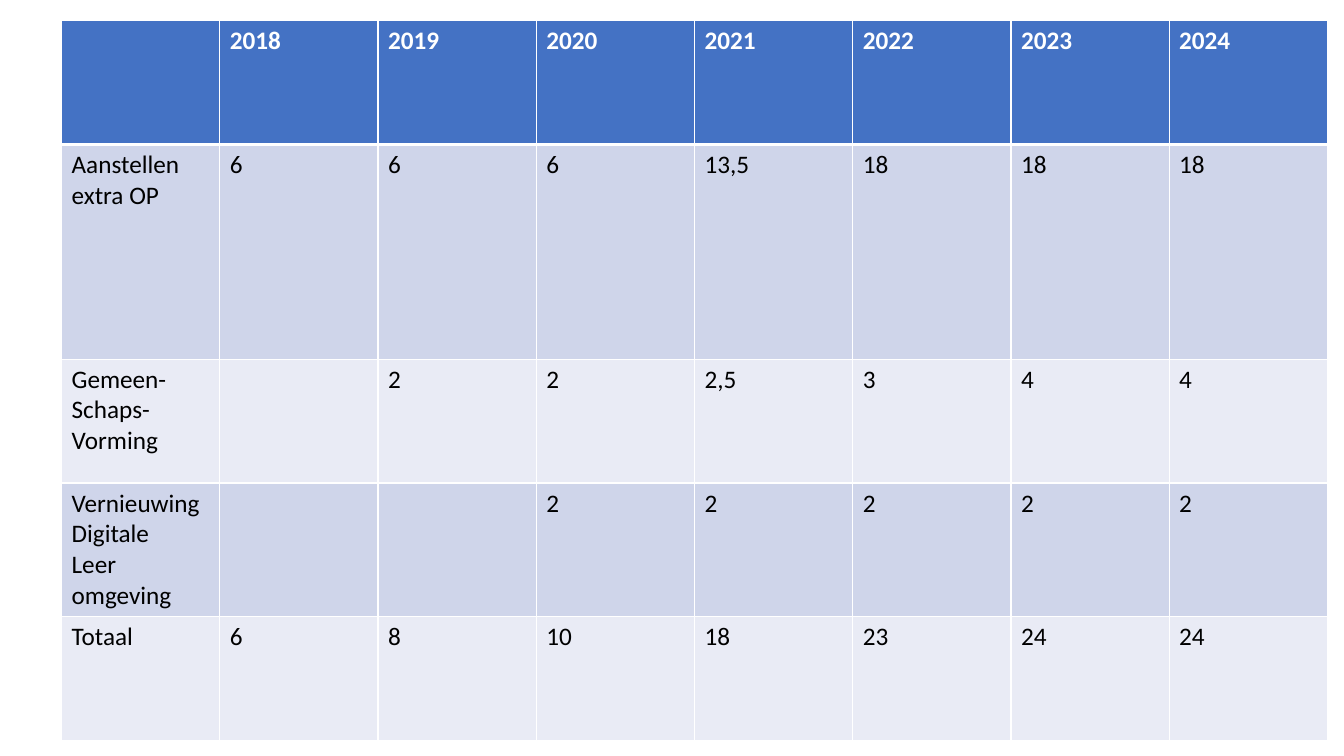
import dataclasses

import pptx
import pptx.dml.color
import pptx.oxml.ns
import pptx.util
from lxml import etree

Pt = pptx.util.Pt


@dataclasses.dataclass(frozen=True)
class Theme:
    font: str = "Calibri"
    size: int = 18
    header: str = "4472C4"
    bands: tuple = ("CFD5EA", "E9EBF5")
    header_text: str = "FFFFFF"
    body_text: str = "000000"
    border: str = "FFFFFF"


THEME = Theme()
COLUMN_WIDTH = 113.04
ROW_HEIGHTS = (88.56, 153.36, 88.56, 88.56, 88.56)

# Each line of a cell is a paragraph
BUDGET = (
    ("", "2018", "2019", "2020", "2021", "2022", "2023", "2024"),
    ("Aanstellen extra OP", "6", "6", "6", "13,5", "18", "18", "18"),
    ("Gemeen-\nSchaps-\nVorming", "", "2", "2", "2,5", "3", "4", "4"),
    ("Vernieuwing\nDigitale\nLeer\nomgeving", "", "", "2", "2", "2", "2", "2"),
    ("Totaal", "6", "8", "10", "18", "23", "24", "24"),
)


def rgb(value):
    return pptx.dml.color.RGBColor.from_string(value)


def write_text(frame, text, *, color, bold=False):
    frame.text = text
    for paragraph in frame.paragraphs:
        # An empty cell keeps its type size on the paragraph
        for font in [paragraph.font] + [run.font for run in paragraph.runs]:
            font.name = THEME.font
            font.size = Pt(THEME.size)
            font.bold = bold
            font.color.rgb = rgb(color)


def add_borders(cell, *, top=1, bottom=1):
    properties = cell._tc.get_or_add_tcPr()
    qn = pptx.oxml.ns.qn
    for side, width in (("L", 1), ("R", 1), ("T", top), ("B", bottom)):
        line = etree.SubElement(properties, qn(f"a:ln{side}"), w=str(Pt(width)))
        fill = etree.SubElement(line, qn("a:solidFill"))
        etree.SubElement(fill, qn("a:srgbClr"), val=THEME.border)


def format_cell(cell, text, row):
    is_header = row == 0
    # The header is set apart by a thicker rule
    add_borders(cell, top=3 if row == 1 else 1, bottom=3 if is_header else 1)
    cell.fill.solid()
    cell.fill.fore_color.rgb = rgb(
        THEME.header if is_header else THEME.bands[(row - 1) % 2])
    write_text(cell.text_frame, text, bold=is_header,
               color=THEME.header_text if is_header else THEME.body_text)


def add_budget_table(slide, left, top):
    column_count = len(BUDGET[0])
    budget = slide.shapes.add_table(
        len(BUDGET), column_count, Pt(left), Pt(top),
        Pt(COLUMN_WIDTH * column_count), Pt(sum(ROW_HEIGHTS))).table
    for column in budget.columns:
        column.width = Pt(COLUMN_WIDTH)
    for row, (height, texts) in enumerate(zip(ROW_HEIGHTS, BUDGET)):
        budget.rows[row].height = Pt(height)
        for column, text in enumerate(texts):
            format_cell(budget.cell(row, column), text, row)


def main():
    presentation = pptx.Presentation()
    presentation.slide_width = Pt(960)
    presentation.slide_height = Pt(540)
    slide = presentation.slides.add_slide(presentation.slide_layouts[6])
    add_budget_table(slide, left=44, top=14.6)
    presentation.save("out.pptx")


if __name__ == "__main__":
    main()
